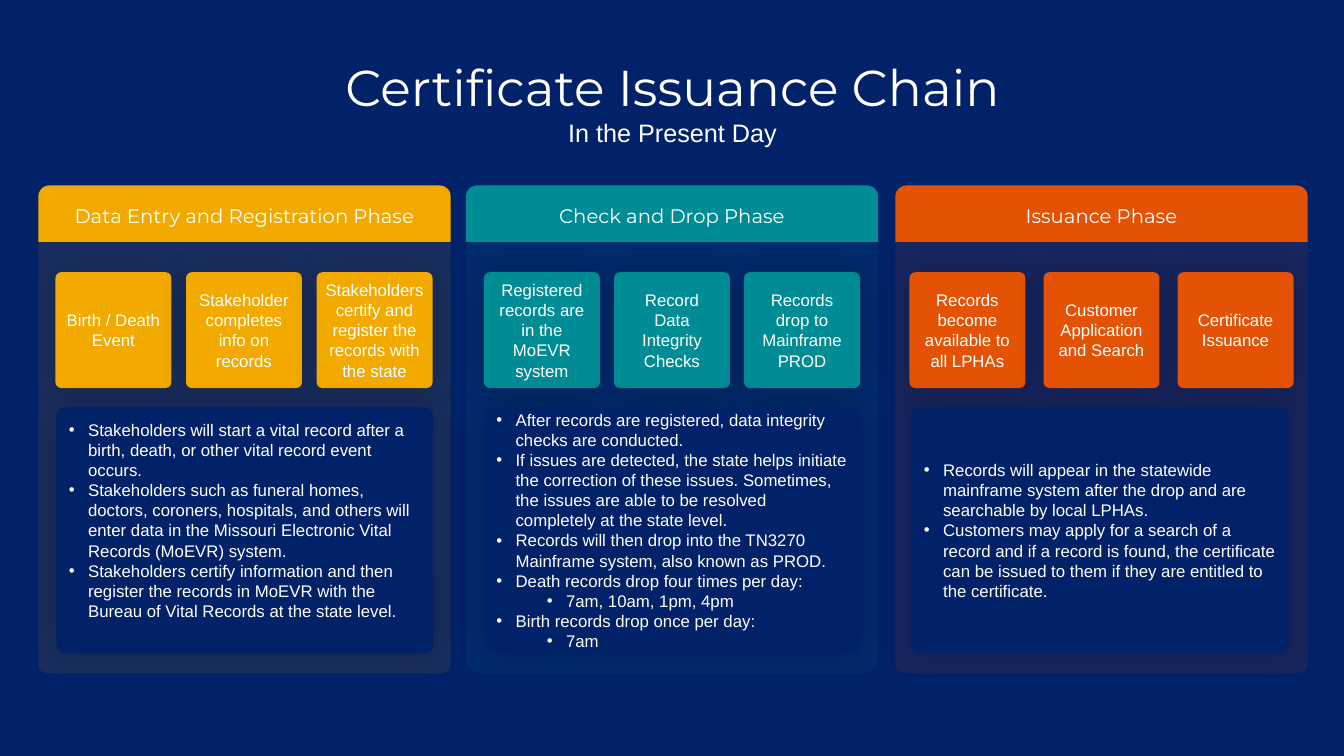
from pptx import Presentation
from pptx.dml.color import RGBColor
from pptx.enum.shapes import MSO_SHAPE
from pptx.enum.text import MSO_ANCHOR, MSO_AUTO_SIZE, PP_ALIGN
from pptx.oxml.ns import qn
from pptx.util import Inches, Pt
from lxml.etree import SubElement

HUES = {"navy": "012169", "white": "FFFFFF", "gold": "F2A900",
        "teal": "008C95", "orange": "E35205", "black": "000000"}

PHASES = [
    {"name": "Data Entry and Registration Phase", "hue": "gold",
     "left": 0.38, "curve": 0.022, "first": 0.55, "step": 1.295, "foot": 0.25,
     "tiles": [("Birth / Death Event", 0.09),
               ("Stakeholder completes info on records", 0.1),
               ("Stakeholders certify and register the records with the state", 0.07)],
     "notes": [
         (0, "Stakeholders will start a vital record after a birth, death, or other vital record event occurs."),
         (0, "Stakeholders such as funeral homes, doctors, coroners, hospitals, and others will enter data in the Missouri Electronic Vital Records (MoEVR) system."),
         (0, "Stakeholders certify information and then register the records in MoEVR with the Bureau of Vital Records at the state level.")]},
    {"name": "Check and Drop Phase", "hue": "teal",
     "left": 4.62, "curve": 0.037, "first": 4.8, "step": 1.29, "foot": 0.05,
     "tiles": [("Registered records are in the MoEVR system", 0.1),
               ("Record Data Integrity Checks", 0.1),
               ("Records drop to Mainframe PROD", 0.1)],
     "notes": [
         (0, "After records are registered, data integrity checks are conducted."),
         (0, "If issues are detected, the state helps initiate the correction of these issues. Sometimes, the issues are able to be resolved completely at the state level."),
         (0, "Records will then drop into the TN3270 Mainframe system, also known as PROD."),
         (0, "Death records drop four times per day:"),
         (1, "7am, 10am, 1pm, 4pm"),
         (0, "Birth records drop once per day:"),
         (1, "7am")]},
    {"name": "Issuance Phase", "hue": "orange",
     "left": 8.88, "curve": 0.023, "first": 9.02, "step": 1.33, "foot": 0.05,
     "tiles": [("Records become available to all LPHAs", 0.1),
               ("Customer Application and Search", 0.1),
               ("Certificate Issuance", 0.1)],
     "notes": [
         (0, "Records will appear in the statewide mainframe system after the drop and are searchable by local LPHAs."),
         (0, "Customers may apply for a search of a record and if a record is found, the certificate can be issued to them if they are entitled to the certificate.")]},
]


def box(kind, place, curve, hue, blur=0):
    shape = slide.shapes.add_shape(kind, *map(Inches, place))
    shape.adjustments[0] = curve
    shape.fill.solid()
    shape.fill.fore_color.rgb = RGBColor.from_string(HUES[hue])
    shape.line.fill.background()
    shape.shadow.inherit = False
    shape.text_frame.word_wrap = True
    shape.text_frame.vertical_anchor = MSO_ANCHOR.MIDDLE
    if blur:
        glow = SubElement(shape.element.spPr.find(qn("a:effectLst")), qn("a:outerShdw"),
                          blurRad=str(Pt(blur)), dist="0", dir="0", algn="ctr", rotWithShape="0")
        tint = SubElement(glow, qn("a:srgbClr"), val=HUES["black"])
        SubElement(tint, qn("a:alpha"), val="20000")
    return shape


def write(para, text, size, font="Arial", align=PP_ALIGN.CENTER):
    para.alignment = align
    run = para.add_run()
    run.text = text
    run.font.size = Pt(size)
    run.font.name = font
    run.font.color.rgb = RGBColor.from_string(HUES["white"])


deck = Presentation()
deck.slide_width, deck.slide_height = Inches(13.33), Inches(7.5)
slide = deck.slides.add_slide(deck.slide_layouts[0])
slide.background.fill.solid()
slide.background.fill.fore_color.rgb = RGBColor.from_string(HUES["navy"])

title, motto = slide.placeholders
for holder, place, anchor, text, size, font, before in [
    (title, (0.92, 0.41, 11.5, 0.97), MSO_ANCHOR.MIDDLE,
     "Certificate Issuance Chain", 36, "Montserrat", 0),
    (motto, (1.67, 1.15, 10, 0.48), MSO_ANCHOR.TOP,
     "In the Present Day", 18, "Arial", 10),
]:
    holder.left, holder.top, holder.width, holder.height = map(Inches, place)
    frame = holder.text_frame
    frame.auto_size = MSO_AUTO_SIZE.NONE
    frame.vertical_anchor = anchor
    para = frame.paragraphs[0]
    para.line_spacing = 0.9
    para.space_before = Pt(before)
    write(para, text, size, font)

for rank, phase in enumerate(PHASES):
    hue = phase["hue"]
    back = box(MSO_SHAPE.ROUNDED_RECTANGLE, (phase["left"], 1.84, 4.09, 4.84), phase["curve"], hue)
    tint = back.element.spPr.find(qn("a:solidFill"))[0]
    SubElement(tint, qn("a:alpha"), val="10000")

    head = box(MSO_SHAPE.ROUND_2_SAME_RECTANGLE, (phase["left"], 1.84, 4.09, 0.56), 0.198, hue)
    write(head.text_frame.paragraphs[0], phase["name"], 14, "Montserrat")

    for spot, (text, inset) in enumerate(phase["tiles"]):
        left = phase["first"] + spot * phase["step"]
        tile = box(MSO_SHAPE.ROUNDED_RECTANGLE, (left, 2.7, 1.15, 1.15), 0.05, hue, 20)
        frame = tile.text_frame
        frame.margin_left = frame.margin_right = Inches(inset)
        write(frame.paragraphs[0], text, 12)

    panel = box(MSO_SHAPE.ROUNDED_RECTANGLE, (0.56 + 4.24 * rank, 4.04, 3.74, 2.44), 0.036, "navy", 22)
    frame = panel.text_frame
    frame.margin_bottom = Inches(phase["foot"])
    for index, (level, text) in enumerate(phase["notes"]):
        para = frame.add_paragraph() if index else frame.paragraphs[0]
        para.level = level
        write(para, text, 12, align=PP_ALIGN.LEFT)
        props = para._p.get_or_add_pPr()
        props.set("marL", str(Inches(0.19 + 0.5 * level)))
        props.set("indent", str(Inches(-0.19)))
        SubElement(props, qn("a:buFont"), typeface="Arial")
        SubElement(props, qn("a:buChar"), char="•")

deck.save("out.pptx")
